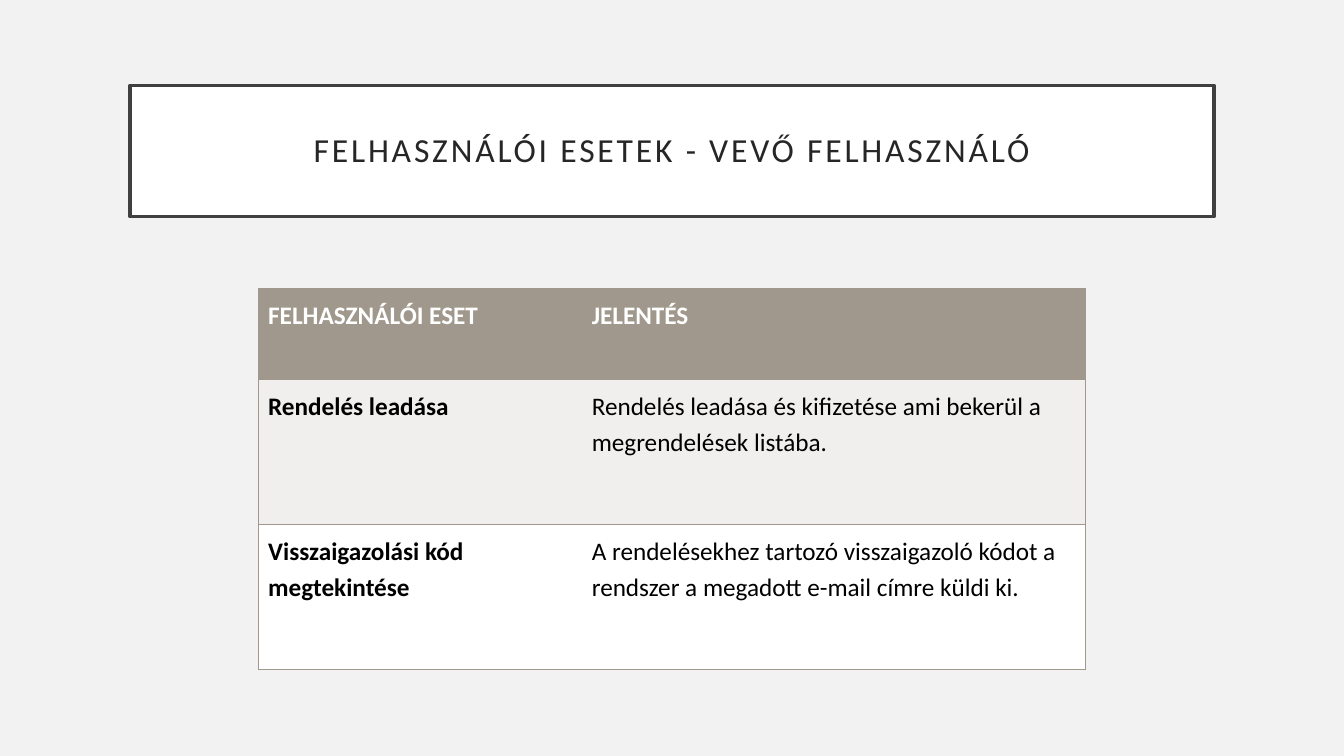
from lxml import etree
from pptx import Presentation
from pptx.dml.color import RGBColor
from pptx.enum.shapes import MSO_SHAPE
from pptx.enum.text import MSO_ANCHOR, PP_ALIGN
from pptx.oxml.ns import qn
from pptx.util import Inches, Pt

RECTANGLE = MSO_SHAPE.RECTANGLE
MIDDLE = MSO_ANCHOR.MIDDLE
CENTER = PP_ALIGN.CENTER

FONT = "Calibri"
TAUPE = "A0988C"
WHITE = "FFFFFF"
COLUMN_WIDTHS = [3.21, 5]
# Height, fill, text colour, cell texts
ROWS = [
    (0.9, TAUPE, WHITE, ["FELHASZNÁLÓI ESET", "JELENTÉS"]),
    (1.44, "F0EFEE", "000000", [
        "Rendelés leadása",
        "Rendelés leadása és kifizetése ami bekerül a megrendelések listába."]),
    (1.44, WHITE, "000000", [
        "Visszaigazolási kód megtekintése",
        "A rendelésekhez tartozó visszaigazoló kódot a rendszer a megadott e-mail címre küldi ki."]),
]


def color(value):
    return RGBColor.from_string(value)


def write_text(paragraph, text, text_color, line_spacing, font_format):
    paragraph.line_spacing = line_spacing
    run = paragraph.add_run()
    run.text = text
    run.font.name = FONT
    run.font.color.rgb = color(text_color)
    for name, value in font_format.items():
        setattr(run.font, name, value)
    return run


presentation = Presentation()
presentation.slide_width = Inches(13.33)
presentation.slide_height = Inches(7.5)
slide = presentation.slides.add_slide(presentation.slide_layouts[6])
slide.background.fill.solid()
slide.background.fill.fore_color.rgb = color("F2F2F2")

# Title box
title = slide.shapes.add_shape(
    RECTANGLE, Inches(1.29), Inches(0.85), Inches(10.75), Inches(1.3))
title.shadow.inherit = False
title.fill.solid()
title.fill.fore_color.rgb = color(WHITE)
title.line.color.rgb = color("404040")
title.line.width = Pt(2.5)
frame = title.text_frame
frame.word_wrap = True
frame.vertical_anchor = MIDDLE
for side in ("left", "right", "top", "bottom"):
    setattr(frame, f"margin_{side}", Inches(0.2))
paragraph = frame.paragraphs[0]
paragraph.alignment = CENTER
run = write_text(paragraph, "FELHASZNÁLÓI ESETEK - VEVŐ FELHASZNÁLÓ",
                 "262626", 0.9, {"size": Pt(24), "bold": False})
run.font._element.set("spc", "200")

# Use case table
table = slide.shapes.add_table(
    len(ROWS), len(COLUMN_WIDTHS), Inches(2.56), Inches(2.86),
    Inches(sum(COLUMN_WIDTHS)), Inches(sum(row[0] for row in ROWS))).table
table.horz_banding = False
for column, width in zip(table.columns, COLUMN_WIDTHS):
    column.width = Inches(width)

for row_index, (height, fill, text_color, texts) in enumerate(ROWS):
    table.rows[row_index].height = Inches(height)
    for column_index, text in enumerate(texts):
        cell = table.cell(row_index, column_index)
        cell.fill.solid()
        cell.fill.fore_color.rgb = color(fill)
        cell.margin_left = cell.margin_right = Inches(0.1)
        cell.margin_top = cell.margin_bottom = Inches(0.08)
        is_bold = row_index == 0 or column_index == 0
        write_text(cell.text_frame.paragraphs[0], text, text_color, 1.15,
                   {"size": Pt(18), "bold": is_bold})

        # Borders all round, except between the two columns
        inner_side = "R" if column_index == 0 else "L"
        properties = cell._tc.get_or_add_tcPr()
        for position, side in enumerate("LRTB"):
            border = etree.Element(qn(f"a:ln{side}"), w=str(Pt(1)))
            if side == inner_side:
                etree.SubElement(border, qn("a:noFill"))
            else:
                solid = etree.SubElement(border, qn("a:solidFill"))
                etree.SubElement(solid, qn("a:srgbClr"), val=TAUPE)
            properties.insert(position, border)

presentation.save("out.pptx")
